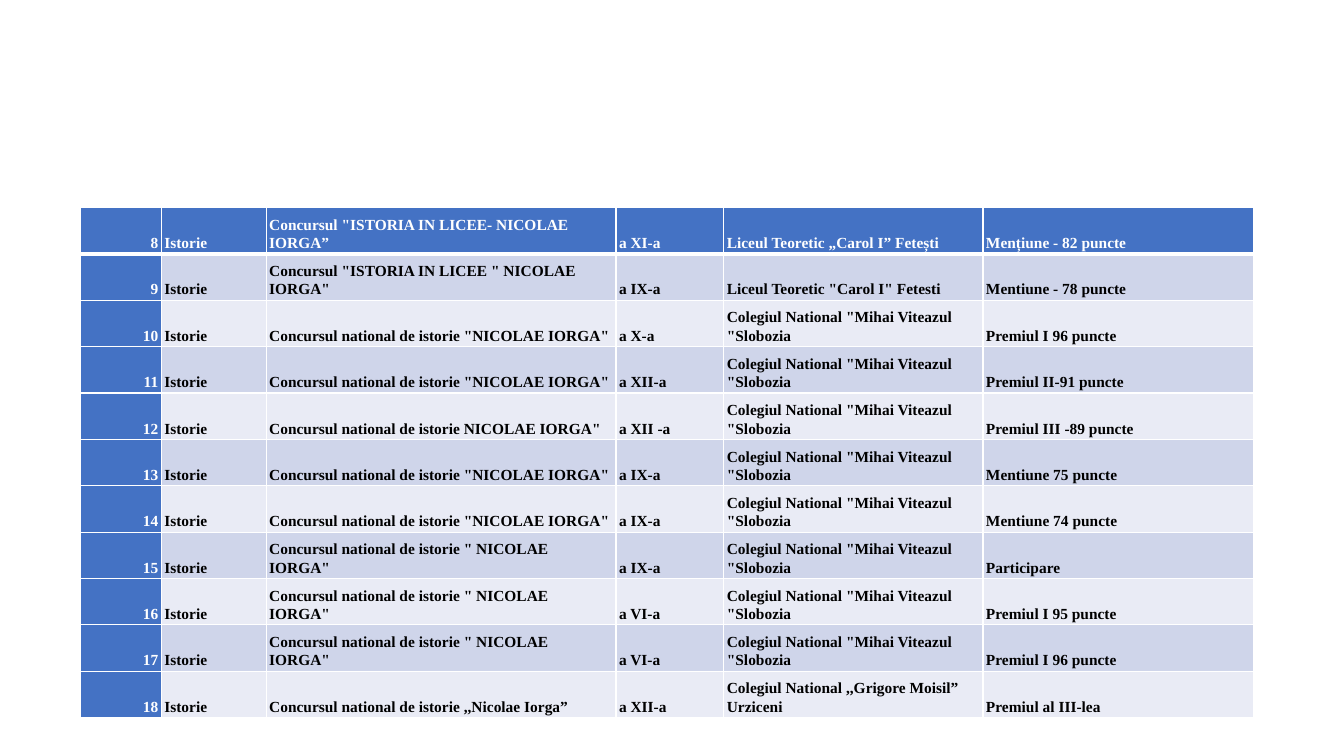
from typing import NamedTuple

from lxml.etree import SubElement
from pptx import Presentation
from pptx.dml.color import RGBColor
from pptx.enum.text import MSO_ANCHOR, PP_ALIGN
from pptx.oxml.ns import qn
from pptx.table import _Cell
from pptx.util import Emu, Pt

PX = 9144  # 100 px to the inch
FONT = "Times New Roman"
WHITE = RGBColor(0xFF, 0xFF, 0xFF)
BLACK = RGBColor(0x00, 0x00, 0x00)
BLUE = RGBColor(0x44, 0x72, 0xC4)
BAND_DARK = RGBColor(0xCF, 0xD5, 0xEA)
BAND_LIGHT = RGBColor(0xE9, 0xEB, 0xF5)

LEFT, TOP, ROW_H = 80, 206, 46
COL_WIDTHS = (80, 104, 347, 107, 257, 268)
FIRST_NUMBER = 8
SUBJECT = "Istorie"
SLOBOZIA = 'Colegiul National "Mihai Viteazul "Slobozia'
IORGA = 'Concursul national de istorie "NICOLAE IORGA"'
IORGA_SPACED = 'Concursul national de istorie " NICOLAE IORGA"'


class Result(NamedTuple):
    contest: str
    grade: str
    school: str
    award: str


RESULTS = (
    Result('Concursul "ISTORIA IN LICEE- NICOLAE IORGA”', "a XI-a",
           "Liceul Teoretic „Carol I” Fetești", "Mențiune - 82 puncte"),
    Result('Concursul "ISTORIA IN LICEE " NICOLAE IORGA"', "a IX-a",
           'Liceul Teoretic "Carol I" Fetesti', "Mentiune - 78 puncte"),
    Result(IORGA, "a X-a", SLOBOZIA, "Premiul I 96 puncte"),
    Result(IORGA, "a XII-a", SLOBOZIA, "Premiul II-91 puncte"),
    Result('Concursul national de istorie NICOLAE IORGA"', "a XII -a",
           SLOBOZIA, "Premiul III -89 puncte"),
    Result(IORGA, "a IX-a", SLOBOZIA, "Mentiune 75 puncte"),
    Result(IORGA, "a IX-a", SLOBOZIA, "Mentiune 74 puncte"),
    Result(IORGA_SPACED, "a IX-a", SLOBOZIA, "Participare"),
    Result(IORGA_SPACED, "a VI-a", SLOBOZIA, "Premiul I 95 puncte"),
    Result(IORGA_SPACED, "a VI-a", SLOBOZIA, "Premiul I 96 puncte"),
    Result("Concursul national de istorie ,,Nicolae Iorga”", "a XII-a",
           "Colegiul National ,,Grigore Moisil” Urziceni", "Premiul al III-lea"),
)


def add_border(cell: _Cell, edge: str, width: int) -> None:
    tc_pr = cell._tc.get_or_add_tcPr()
    ln = SubElement(tc_pr, qn(f"a:ln{edge}"), w=str(Pt(width)))
    fill = SubElement(ln, qn("a:solidFill"))
    SubElement(fill, qn("a:srgbClr"), val=str(WHITE))


def fill_cell(cell: _Cell, text: str, row: int, col: int) -> None:
    header = row == 0
    accent = header or col == 0
    # The first row owns the top edge; every other row uses the one above
    for edge in "LRTB" if header else "LRB":
        add_border(cell, edge, 3 if header and edge == "B" else 1)
    cell.fill.solid()
    band = BAND_DARK if row % 2 else BAND_LIGHT
    cell.fill.fore_color.rgb = BLUE if accent else band
    cell.vertical_anchor = MSO_ANCHOR.BOTTOM
    cell.margin_left = cell.margin_right = Emu(3 * PX)
    cell.margin_top = cell.margin_bottom = Emu(2 * PX)

    p = cell.text_frame.paragraphs[0]
    p.alignment = PP_ALIGN.RIGHT if col == 0 else PP_ALIGN.LEFT
    p.line_spacing = 1.07
    r = p.add_run()
    r.text = text
    r.font.name = FONT
    r.font.size = Pt(11)
    r.font.bold = True
    r.font.color.rgb = WHITE if accent else BLACK


def main() -> None:
    prs = Presentation()
    prs.slide_width, prs.slide_height = Emu(1333 * PX), Emu(750 * PX)
    s = prs.slides.add_slide(prs.slide_layouts[6])

    frame = s.shapes.add_table(
        len(RESULTS), len(COL_WIDTHS), Emu(LEFT * PX), Emu(TOP * PX),
        Emu(sum(COL_WIDTHS) * PX), Emu(len(RESULTS) * ROW_H * PX))
    table = frame.table
    table.first_col = True
    for column, width in zip(table.columns, COL_WIDTHS):
        column.width = Emu(width * PX)
    for row, result in enumerate(RESULTS):
        table.rows[row].height = Emu(ROW_H * PX)
        for col, text in enumerate((str(FIRST_NUMBER + row), SUBJECT, *result)):
            fill_cell(table.cell(row, col), text, row, col)

    prs.save("out.pptx")


if __name__ == "__main__":
    main()
